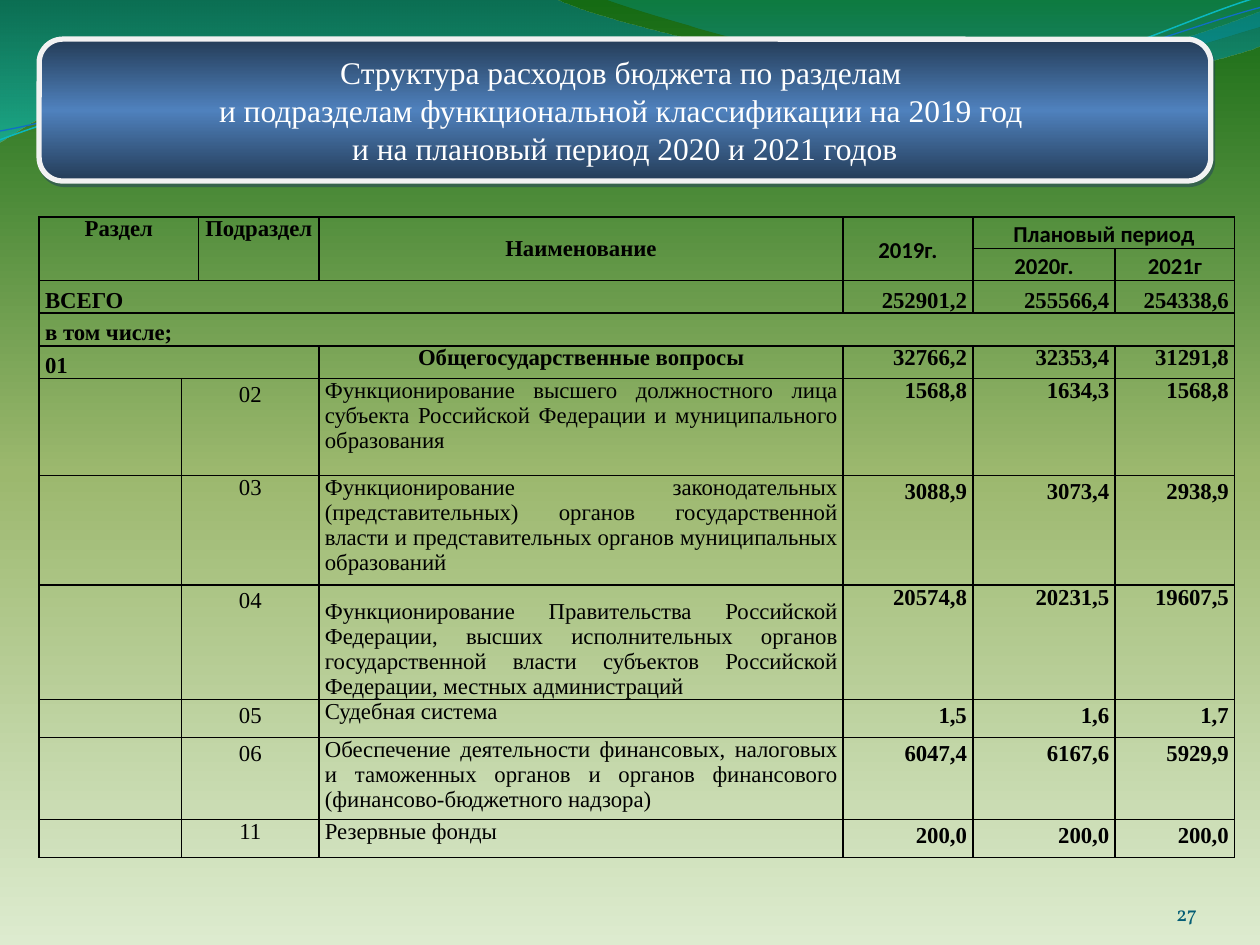
from lxml.etree import SubElement, fromstring
from pptx import Presentation
from pptx.dml.color import RGBColor
from pptx.enum.shapes import MSO_SHAPE as Shape
from pptx.enum.text import MSO_ANCHOR as Anchor, PP_ALIGN as Align
from pptx.oxml.ns import qn
from pptx.util import Cm, Pt

# Content
TITLE = [
    "Структура расходов бюджета по разделам ",
    "и подразделам функциональной классификации на 2019 год ",
    "и на плановый период 2020 и 2021 годов",
]
PAGE_NUMBER = "27"
TOTALS = ["252901,2", "255566,4", "254338,6"]
SECTION_TOTALS = ["32766,2", "32353,4", "31291,8"]
# code, name, values, loose code, loose values
SUBSECTIONS = [
    ("02", "Функционирование высшего должностного лица субъекта Российской Федерации "
     "и муниципального образования", ["1568,8", "1634,3", "1568,8"], True, False),
    ("03", "Функционирование законодательных (представительных) органов государственной "
     "власти и представительных органов муниципальных образований",
     ["3088,9", "3073,4", "2938,9"], False, True),
    ("04", "Функционирование Правительства Российской Федерации, высших исполнительных "
     "органов государственной власти субъектов Российской Федерации, местных администраций",
     ["20574,8", "20231,5", "19607,5"], True, False),
    ("05", "Судебная система", ["1,5", "1,6", "1,7"], True, True),
    ("06", "Обеспечение деятельности финансовых, налоговых и таможенных органов и органов "
     "финансового (финансово-бюджетного надзора)", ["6047,4", "6167,6", "5929,9"], True, True),
    ("11", "Резервные фонды", ["200,0", "200,0", "200,0"], False, True),
]
COLUMNS = [2.87, 0.28, 2.43, 10.56, 2.62, 2.87, 2.41]
ROWS = [0.64, 0.64, 0.66, 0.66, 0.66, 1.96, 1.96, 2.31, 0.76, 1.42, 0.76]

COLORS = {"text": "000000", "title": "FFFFFF", "number": "045D75", "frame": "F2F2F2",
          "shadow": "243F60", "cyan": "0AB8BF", "blue": "0F6FC6"}
# Gradient stops: position, colour, opacity
BACKGROUND = [(0, "DDEBCF", 100), (50, "9CB86E", 100), (100, "156B13", 100)]
TITLE_FILL = [(0, "243C57", 100), (50, "4F81BD", 100), (100, "243C57", 100)]
# Waves in inches: a pair is a line's end, six numbers are a curve
WAVES = [
    ([(0, -0.01), (4.4, -0.01), (4.76, 0.17, 6.64, 0.63, 7.58, 0.63),
      (8.53, 0.63, 9.58, 0.26, 10, 0.09), (10.01, 0.36),
      (9.83, 0.44, 8.7, 0.76, 7.46, 0.75), (6.22, 0.75, 3.82, 0.28, 2.57, 0.34),
      (1.29, 0.35, 0.46, 0.83, -0.01, 1.13)],
     [(0, "0074A1", 45), (100, "00C6CF", 55)]),
    ([(4.79, -0.01), (5.09, 0.11, 6.82, 0.62, 7.69, 0.65),
      (8.56, 0.69, 9.61, 0.32, 10, 0.21), (10, 0)],
     [(0, "00A1A9", 30), (80, "008BBF", 45)]),
]
WAVE_LINES = [
    ([(0, 1.11), (0.48, 0.93, 1.58, 0.57, 2.77, 0.52), (3.95, 0.47, 5.93, 0.89, 7.13, 0.8),
      (8.33, 0.71, 9.38, 0.15, 9.98, -0.02)], "cyan", 0.85),
    ([(0, 1.04), (0.47, 0.96, 1.64, 0.61, 2.83, 0.56), (4.03, 0.51, 5.97, 0.83, 7.17, 0.75),
      (8.36, 0.67, 9.41, 0.21, 10, 0.06)], "blue", 0.75),
]
NAMESPACE = 'xmlns:a="http://schemas.openxmlformats.org/drawingml/2006/main"'


def color(name):
    return RGBColor.from_string(COLORS[name])


def write(frame, lines, size=13, font="Times New Roman", tint="text", bold=False,
          align=Align.LEFT, anchor=Anchor.TOP, before=0, after=0, spacing=1.0):
    frame.word_wrap = True
    frame.vertical_anchor = anchor
    for index, line in enumerate(lines):
        para = frame.add_paragraph() if index else frame.paragraphs[0]
        para.alignment, para.line_spacing = align, spacing
        para.space_before, para.space_after = Pt(before), Pt(after)
        span = para.add_run()
        span.text = line
        span.font.size, span.font.name, span.font.bold = Pt(size), font, bold
        span.font.color.rgb = color(tint)


def gradient(fill, parent, stops, angle):
    """Replace the parent's fill with a linear gradient."""
    fill.solid()
    fill.fore_color.rgb = RGBColor.from_string(stops[0][1])
    marks = "".join(
        f'<a:gs pos="{position * 1000}"><a:srgbClr val="{tint}">'
        f'<a:alpha val="{opacity * 1000}"/></a:srgbClr></a:gs>'
        for position, tint, opacity in stops)
    solid = parent.find(qn("a:solidFill"))
    parent.replace(solid, fromstring(
        f'<a:gradFill {NAMESPACE} rotWithShape="1"><a:gsLst>{marks}</a:gsLst>'
        f'<a:lin ang="{angle * 60000}" scaled="0"/></a:gradFill>'))


def trace(steps, close):
    """Build an outline through all points, then join each curve's three into a Bezier."""
    points = [(Cm(2.54 * x), Cm(2.54 * y))
              for step in steps for x, y in zip(step[::2], step[1::2])]
    builder = page.shapes.build_freeform(*points[0])
    builder.add_line_segments(points[1:], close=close)
    shape = builder.convert_to_shape()
    shape.shadow.inherit = False
    segments = iter(list(shape.element.spPr.iter(qn("a:lnTo"))))
    for step in steps[1:]:
        parts = [next(segments) for _ in range(len(step) // 2)]
        if len(parts) == 3:
            curve = SubElement(parts[0].getparent(), qn("a:cubicBezTo"))
            parts[0].addprevious(curve)
            for part in parts:
                curve.append(part[0])
                part.getparent().remove(part)
    return shape


deck = Presentation()
deck.slide_width, deck.slide_height = Cm(25.4), Cm(19.05)
page = deck.slides.add_slide(deck.slide_layouts[6])

# Background and waves
back = page.background.fill
back.solid()
gradient(back, page.element.find(".//" + qn("p:bgPr")), BACKGROUND, 270)
for steps, stops in WAVES:
    wave = trace(steps, True)
    gradient(wave.fill, wave.element.spPr, stops, 90)
    wave.line.fill.background()
for steps, tint, width in WAVE_LINES:
    wave = trace(steps, False)
    wave.fill.background()
    wave.line.color.rgb, wave.line.width = color(tint), Pt(width)

# Page number
box = page.shapes.add_textbox(Cm(22.02), Cm(17.65), Cm(2.11), Cm(1.02))
frame = box.text_frame
frame.margin_left = frame.margin_right = frame.margin_top = frame.margin_bottom = 0
write(frame, [PAGE_NUMBER], size=12, font="Vollkorn", tint="number",
      align=Align.RIGHT, anchor=Anchor.BOTTOM)

# Title panel
panel = page.shapes.add_shape(Shape.FLOWCHART_ALTERNATE_PROCESS,
                              Cm(0.79), Cm(0.79), Cm(23.62), Cm(2.86))
gradient(panel.fill, panel.element.spPr, TITLE_FILL, 90)
panel.line.color.rgb, panel.line.width = color("frame"), Pt(3)
panel.element.spPr.append(fromstring(
    f'<a:effectLst {NAMESPACE}><a:outerShdw dist="{Pt(2.2)}" dir="{63 * 60000}">'
    f'<a:srgbClr val="{COLORS["shadow"]}"><a:alpha val="50000"/></a:srgbClr>'
    '</a:outerShdw></a:effectLst>'))
write(panel.text_frame, TITLE, size=18, tint="title", align=Align.CENTER, anchor=Anchor.MIDDLE)

# Table cells: (row, column) -> text, format
LOOSE = {"spacing": 1.15, "after": 10}
HEAD = {"bold": True, "align": Align.CENTER, "before": 12, "after": 3}
YEAR = {"bold": True, "align": Align.CENTER, "font": "Calibri", **LOOSE}
LABEL = {"bold": True, "anchor": Anchor.BOTTOM}
VALUE = {"bold": True, "align": Align.RIGHT}
cells = {
    (0, 0): ("Раздел", HEAD), (0, 2): ("Подраздел", HEAD),
    (0, 3): ("Наименование", {**HEAD, "anchor": Anchor.MIDDLE}),
    (0, 4): ("2019г.", {**YEAR, "anchor": Anchor.MIDDLE}),
    (0, 5): ("Плановый период", YEAR), (1, 5): ("2020г.", YEAR), (1, 6): ("2021г", YEAR),
    (2, 0): ("ВСЕГО", LABEL), (3, 0): ("в том числе;", LABEL), (4, 0): ("01", LABEL),
    (4, 3): ("Общегосударственные вопросы", {"bold": True, "align": Align.CENTER}),
}
spans = [(0, 0, 1, 1), (0, 2, 1, 2), (0, 3, 1, 3), (0, 4, 1, 4), (0, 5, 0, 6),
         (2, 0, 2, 3), (3, 0, 3, 6), (4, 0, 4, 2)]
value_rows = [(2, TOTALS, {"anchor": Anchor.BOTTOM}), (4, SECTION_TOTALS, {})]
for row, (code, name, values, loose_code, loose_values) in enumerate(SUBSECTIONS, 5):
    cells[row, 1] = (code, {"align": Align.CENTER, **(LOOSE if loose_code else {})})
    cells[row, 3] = (name, {"align": Align.JUSTIFY,
                            "anchor": Anchor.BOTTOM if code == "04" else Anchor.TOP})
    spans.append((row, 1, row, 2))
    value_rows.append((row, values, LOOSE if loose_values else {}))
for row, values, extra in value_rows:
    for column, value in enumerate(values, 4):
        cells[row, column] = (value, {**VALUE, **extra})

# Table
table = page.shapes.add_table(len(ROWS), len(COLUMNS), Cm(0.79), Cm(4.37),
                              Cm(sum(COLUMNS)), Cm(sum(ROWS))).table
table.first_row = table.horz_banding = False
for column, width in zip(table.columns, COLUMNS):
    column.width = Cm(width)
for row, height in zip(table.rows, ROWS):
    row.height = Cm(height)
for top, left, bottom, right in spans:
    table.cell(top, left).merge(table.cell(bottom, right))
for row in range(len(ROWS)):
    for column in range(len(COLUMNS)):
        cell = table.cell(row, column)
        cell.margin_left = cell.margin_right = Cm(0.12)
        cell.margin_top = cell.margin_bottom = 0
        cell.fill.background()
        if (row, column) in cells:
            text, style = cells[row, column]
            cell.vertical_anchor = style.get("anchor", Anchor.TOP)
            write(cell.text_frame, [text], **{**style, "anchor": None})
        for index, side in enumerate("LRTB"):
            cell._tc.tcPr.insert(index, fromstring(
                f'<a:ln{side} {NAMESPACE} w="{Pt(1)}"><a:solidFill>'
                f'<a:srgbClr val="{COLORS["text"]}"/></a:solidFill></a:ln{side}>'))

deck.save("out.pptx")
